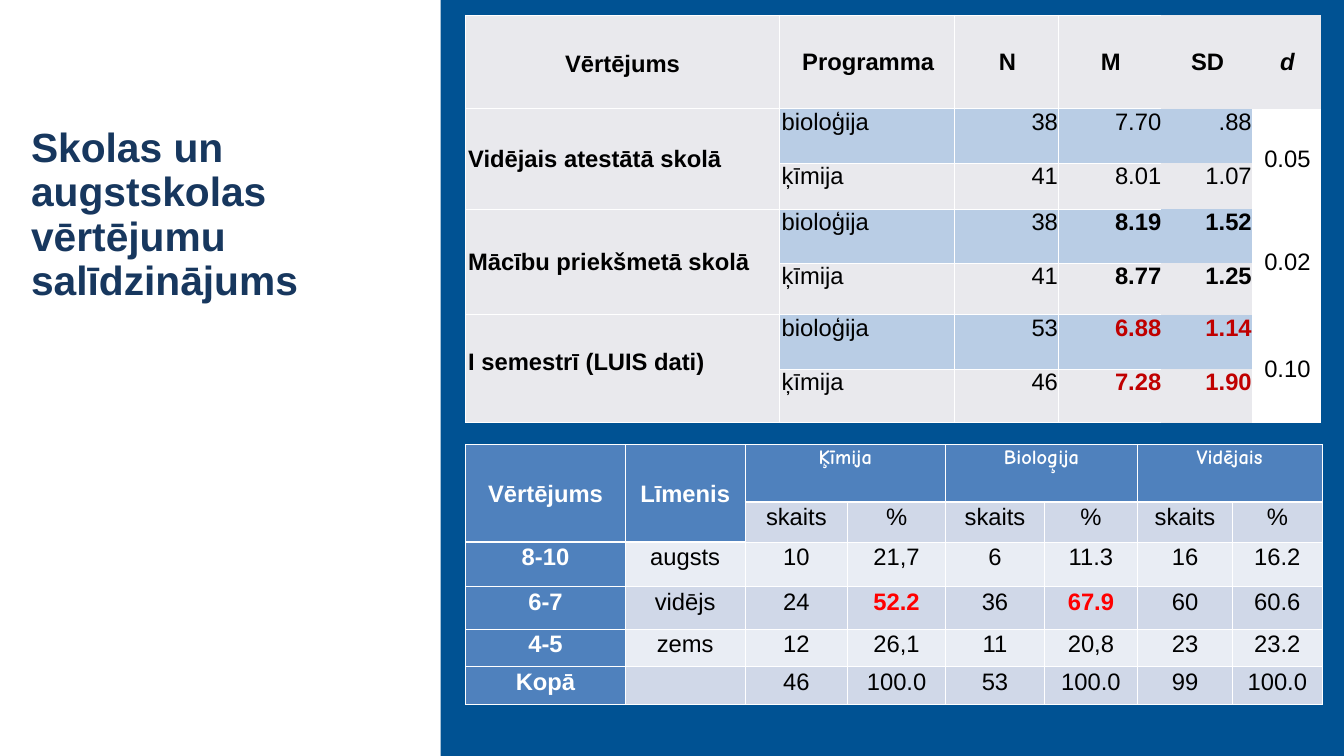
from lxml import etree
from pptx import Presentation
from pptx.dml.color import RGBColor
from pptx.enum import shapes, text
from pptx.oxml import ns
from pptx.util import Inches, Pt

WHITE = RGBColor(0xFF, 0xFF, 0xFF)
BLACK = RGBColor(0, 0, 0)
NAVY = RGBColor(0x17, 0x37, 0x5E)
PANEL = RGBColor(0x00, 0x52, 0x93)
GREY = RGBColor(0xE9, 0xE9, 0xED)
SKY = RGBColor(0xB9, 0xCD, 0xE5)
BLUE = RGBColor(0x4F, 0x81, 0xBD)
BAND_DARK = RGBColor(0xD0, 0xD8, 0xE8)
BAND_LIGHT = RGBColor(0xE9, 0xED, 0xF4)
DARK_RED = RGBColor(0xC0, 0, 0)
RED = RGBColor(0xFF, 0, 0)

LEFT, CENTER, RIGHT = text.PP_ALIGN.LEFT, text.PP_ALIGN.CENTER, text.PP_ALIGN.RIGHT
TOP, MIDDLE = text.MSO_ANCHOR.TOP, text.MSO_ANCHOR.MIDDLE

HEADING = "Skolas un augstskolas vērtējumu salīdzinājums"

PROGRAMMES = [
    ("Vērtējums", "Programma", "N", "M", "SD", "d"),
    ("Vidējais atestātā skolā", "bioloģija", "38", "7.70", ".88", "0.05"),
    ("", "ķīmija", "41", "8.01", "1.07", ""),
    ("Mācību priekšmetā skolā", "bioloģija", "38", "8.19", "1.52", "0.02"),
    ("", "ķīmija", "41", "8.77", "1.25", ""),
    ("I semestrī (LUIS dati)", "bioloģija", "53", "6.88", "1.14", "0.10"),
    ("", "ķīmija", "46", "7.28", "1.90", ""),
]
PROGRAMME_COLS = (5.13, 2.87, 1.69, 1.69, 1.48, 1.13)
PROGRAMME_ROWS = (1.53, 0.89, 0.75, 0.89, 0.84, 0.89, 0.88)
PROGRAMME_MERGES = [(row, col, row + 1, col) for row in (1, 3, 5) for col in (0, 5)]

LEVELS = [
    ("Vērtējums", "Līmenis", "Ķīmija", "", "Bioloģija", "", "Vidējais", ""),
    ("", "", "skaits", "%", "skaits", "%", "skaits", "%"),
    ("8-10", "augsts", "10", "21,7", "6", "11.3", "16", "16.2"),
    ("6-7", "vidējs", "24", "52.2", "36", "67.9", "60", "60.6"),
    ("4-5", "zems", "12", "26,1", "11", "20,8", "23", "23.2"),
    ("Kopā", "", "46", "100.0", "53", "100.0", "99", "100.0"),
]
LEVEL_COLS = (2.61, 1.96, 1.68, 1.6, 1.62, 1.52, 1.56, 1.46)
LEVEL_ROWS = (0.95, 0.65, 0.73, 0.69, 0.62, 0.62)
LEVEL_MERGES = [(0, 0, 1, 0), (0, 1, 1, 1), (0, 2, 0, 3), (0, 4, 0, 5), (0, 6, 0, 7)]
HIGHLIGHTS = {"52.2", "67.9"}


def set_font(paragraph, size, color, bold, name="Arial", italic=False):
    font = paragraph.font
    font.size, font.name, font.bold, font.italic = Pt(size), name, bold, italic
    font.color.rgb = color


def set_borders(cell, widths):
    props = cell._tc.get_or_add_tcPr()
    for place, (side, width) in enumerate(zip("LRTB", widths)):
        line = etree.Element(ns.qn(f"a:ln{side}"), w=str(Pt(width)))
        if width:
            solid = etree.SubElement(line, ns.qn("a:solidFill"))
            etree.SubElement(solid, ns.qn("a:srgbClr"), val=str(WHITE))
        else:
            etree.SubElement(line, ns.qn("a:noFill"))
        props.insert(place, line)


def style_programme(cell, row, col):
    header, label, effect = row == 0, col == 0, col == 5
    figure = col in (3, 4) and not header
    if effect and not header:
        fill = WHITE
    else:
        fill = SKY if row % 2 and not label else GREY
    cell.fill.solid()
    cell.fill.fore_color.rgb = fill
    cell.margin_left = cell.margin_right = cell.margin_top = cell.margin_bottom = 0
    cell.vertical_anchor = MIDDLE if header or label or effect else TOP
    set_borders(cell, (0,) * 4 if col > 3 else (1, 0 if col == 3 else 1, 1, 1))
    if not cell.text:
        return
    line = cell.text_frame.paragraphs[0]
    if header or effect:
        line.alignment = CENTER
    else:
        line.alignment = LEFT if col < 2 else RIGHT
    if header and label:
        line.line_spacing = 1.15
    else:
        line._p.get_or_add_pPr().set("marL", str(Inches(0.04)))
    if label and row == 5:
        line.line_spacing = Pt(16)
    if not (label and row in (1, 3)):
        line.space_after = Pt(10)
    set_font(line, 28, DARK_RED if figure and row > 4 else BLACK,
             header or label or (figure and row > 2), italic=header and effect)


def style_level(cell, row, col):
    heading = row == 0 or col == 0 or (row == 1 and col == 1)
    subject = row == 0 and col > 1
    highlight = cell.text in HIGHLIGHTS
    cell.fill.solid()
    cell.fill.fore_color.rgb = BLUE if heading else BAND_DARK if row % 2 else BAND_LIGHT
    if row == 5 and not heading:
        cell.fill.fore_color.rgb = BAND_DARK
    cell.margin_left = cell.margin_right = Inches(0.07)
    cell.margin_top = cell.margin_bottom = 0
    cell.vertical_anchor = MIDDLE if row == 0 and col < 2 else TOP
    set_borders(cell, (1, 1, 1, 3 if row == 0 or (row == 1 and col < 2) else 1))
    if not cell.text:
        return
    line = cell.text_frame.paragraphs[0]
    line.alignment = CENTER
    line.line_spacing = 1.07
    set_font(line, 24 if subject else 28, WHITE if heading else RED if highlight else BLACK,
             heading or highlight, "Comic Neue" if subject else "Arial")


def add_grid(slide, top, content, widths, heights, merges, style):
    grid = slide.shapes.add_table(len(heights), len(widths), Inches(7.62), Inches(top),
                                  Inches(sum(widths)), Inches(sum(heights))).table
    for column, width in zip(grid.columns, widths):
        column.width = Inches(width)
    for band, height in zip(grid.rows, heights):
        band.height = Inches(height)
    for row, values in enumerate(content):
        for col, value in enumerate(values):
            cell = grid.cell(row, col)
            if value:
                cell.text = value
            style(cell, row, col)
    for row, col, last_row, last_col in merges:
        grid.cell(row, col).merge(grid.cell(last_row, last_col))


def main():
    deck = Presentation()
    deck.slide_width, deck.slide_height = Inches(21.99), Inches(12.37)
    slide = deck.slides.add_slide(deck.slide_layouts[6])

    panel = slide.shapes.add_shape(shapes.MSO_SHAPE.RECTANGLE, Inches(7.21), 0,
                                   Inches(14.78), Inches(12.37))
    panel.shadow.inherit = False
    panel.fill.solid()
    panel.fill.fore_color.rgb = PANEL
    panel.line.fill.background()

    heading = slide.shapes.add_textbox(Inches(0.41), Inches(2.02), Inches(6.58), Inches(3.08))
    heading.text_frame.word_wrap = True
    heading.text_frame.text = HEADING
    title = heading.text_frame.paragraphs[0]
    title.line_spacing = 0.91
    set_font(title, 48, NAVY, True)

    add_grid(slide, 0.25, PROGRAMMES, PROGRAMME_COLS, PROGRAMME_ROWS, PROGRAMME_MERGES,
             style_programme)
    add_grid(slide, 7.27, LEVELS, LEVEL_COLS, LEVEL_ROWS, LEVEL_MERGES, style_level)
    deck.save("out.pptx")


if __name__ == "__main__":
    main()
